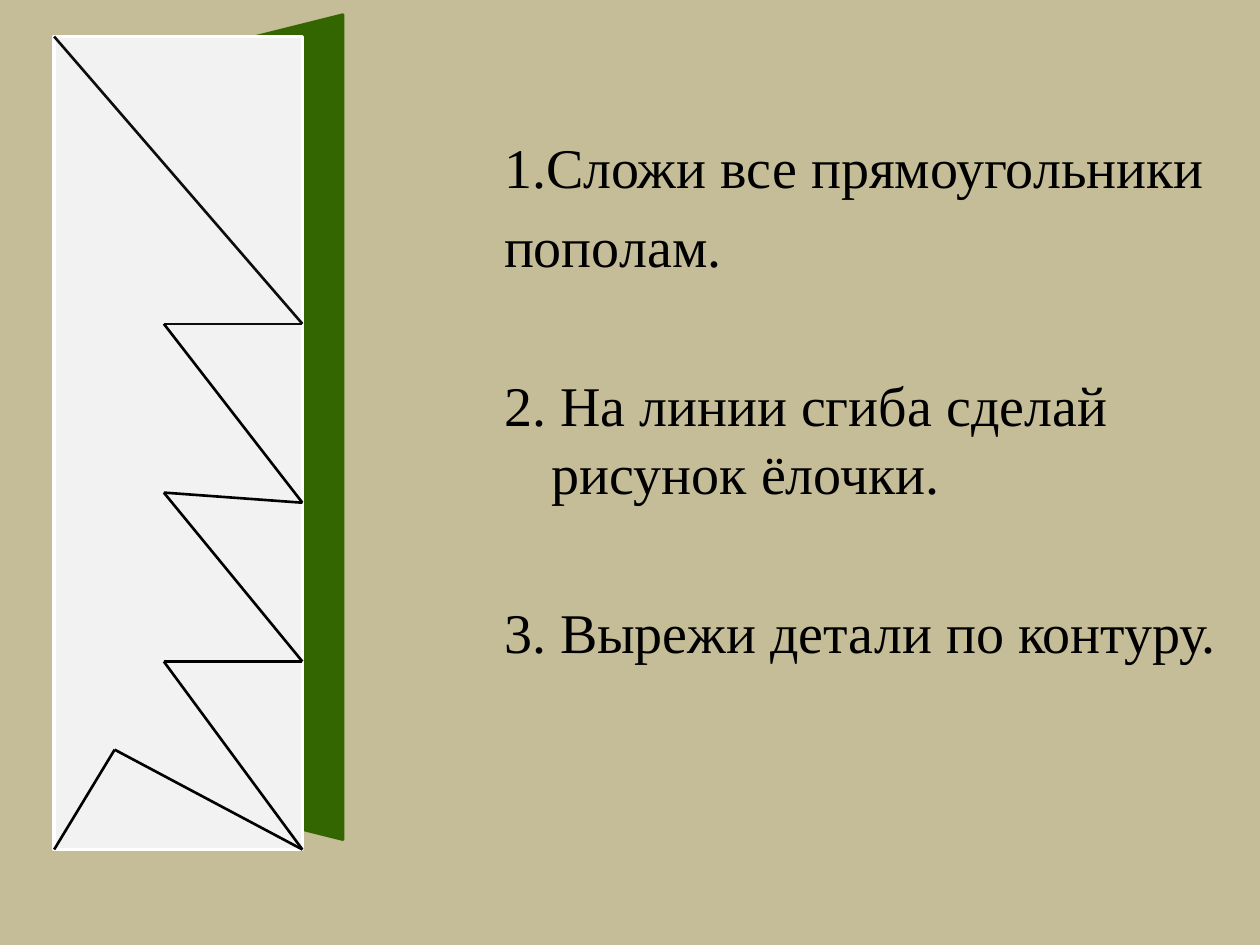
"""Build a slide on folding, drawing and cutting out a paper fir tree."""
from dataclasses import dataclass
from itertools import pairwise

from lxml import etree
from pptx import Presentation
from pptx import util as u
from pptx.dml.color import RGBColor
from pptx.enum import shapes, text
from pptx.oxml.ns import qn

WIDE, HIGH = u.Inches(10), u.Inches(7.5)
HUES = {"sand": "C4BD97", "green": "336600", "paper": "F2F2F2",
        "white": "FFFFFF", "soft": "0D0D0D", "black": "000000"}
SIZE, LEAD, GAP, HANG = 32, 39, 6.4, 0.38


@dataclass(frozen=True)
class Box:
    """Hold a preset shape's frame in percent of the slide, and its look."""
    kind: shapes.MSO_SHAPE
    left: float
    top: float
    wide: float
    high: float
    fill: str
    line: str
    turn: float = 0


@dataclass(frozen=True)
class Step:
    """Hold one line of advice and the count of empty lines above it."""
    words: str
    skip: int = 0


SHEETS = [
    Box(shapes.MSO_SHAPE.TRAPEZOID, -16.9, 30, 65.4, 30.4, "green", "green", 270),
    Box(shapes.MSO_SHAPE.RECTANGLE, 4.3, 3.87, 19.7, 86.05, "paper", "white"),
]
EDGE, FOLD, NOTCH, TRUNK = 4.3, 24, 13, 9.1
TREE = [(EDGE, 3.87), (FOLD, 34.27), (NOTCH, 34.27), (FOLD, 53.2),
        (NOTCH, 52.13), (FOLD, 70), (NOTCH, 70), (FOLD, 89.9),
        (TRUNK, 79.33), (EDGE, 89.9)]
STEPS = [
    Step("1.Сложи все прямоугольники"),
    Step("пополам."),
    Step("2. На линии сгиба сделай рисунок ёлочки.", 1),
    Step("3. Вырежи детали по контуру.", 1),
]


def hue(name: str) -> RGBColor:
    """Return a named colour."""
    return RGBColor.from_string(HUES[name])


def across(part: float) -> int:
    """Turn percent of the slide's width into a length."""
    return round(WIDE * part / 100)


def down(part: float) -> int:
    """Turn percent of the slide's height into a length."""
    return round(HIGH * part / 100)


def draw_box(slide, box: Box) -> None:
    """Draw one sheet of paper."""
    shape = slide.shapes.add_shape(box.kind, across(box.left), down(box.top),
                                   across(box.wide), down(box.high))
    shape.rotation = box.turn
    shape.shadow.inherit = False
    shape.fill.solid()
    shape.fill.fore_color.rgb = hue(box.fill)
    shape.line.color.rgb = hue(box.line)
    shape.line.width = u.Pt(2)


def draw_line(slide, start: tuple, end: tuple, tint: str) -> None:
    """Draw one stroke of the tree's outline."""
    line = slide.shapes.add_connector(
        shapes.MSO_CONNECTOR.STRAIGHT, across(start[0]), down(start[1]),
        across(end[0]), down(end[1]))
    line.line.color.rgb = hue(tint)
    line.line.width = u.Pt(1.5)
    etree.SubElement(line._element.spPr, qn("a:effectLst"))


def write_step(para, step: Step) -> None:
    """Write one hanging line of advice."""
    para.line_spacing = u.Pt(LEAD)
    para.space_before = u.Pt(GAP + step.skip * (LEAD + GAP))
    para.alignment = text.PP_ALIGN.LEFT
    props = para._p.get_or_add_pPr()
    props.set("marL", str(u.Inches(HANG)))
    props.set("indent", str(-u.Inches(HANG)))
    etree.SubElement(props, qn("a:buNone"))
    run = para.add_run()
    run.text = step.words
    run.font.name = "Times New Roman"
    run.font.size = u.Pt(SIZE)
    run.font.color.rgb = hue("black")


def write_steps(body) -> None:
    """Place the body text and fill it."""
    body.left, body.top = across(39), down(13.2)
    body.width, body.height = across(59.1), down(62.93)
    frame = body.text_frame
    frame.word_wrap = True
    frame.auto_size = text.MSO_AUTO_SIZE.NONE
    frame.vertical_anchor = text.MSO_ANCHOR.TOP
    for spot, step in enumerate(STEPS):
        write_step(frame.add_paragraph() if spot else frame.paragraphs[0], step)


def main() -> None:
    """Build and save the deck."""
    deck = Presentation()
    deck.slide_width, deck.slide_height = WIDE, HIGH
    slide = deck.slides.add_slide(deck.slide_layouts[1])
    slide.background.fill.solid()
    slide.background.fill.fore_color.rgb = hue("sand")
    title = slide.shapes.title._element
    title.getparent().remove(title)
    write_steps(slide.placeholders[1])
    for box in SHEETS:
        draw_box(slide, box)
    for spot, (start, end) in enumerate(pairwise(TREE)):
        draw_line(slide, start, end, "soft" if spot < 2 else "black")
    deck.save("out.pptx")


if __name__ == "__main__":
    main()
